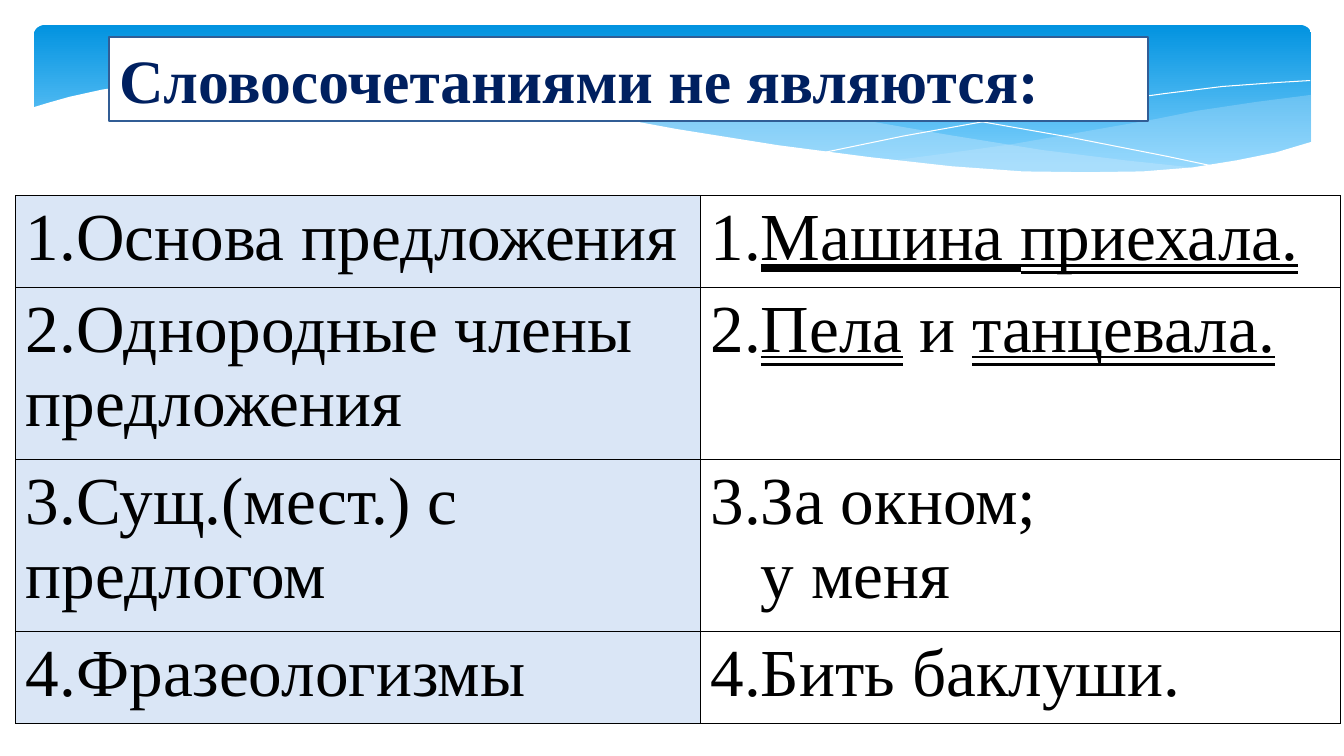
import pptx
import pptx.dml.color
import pptx.enum.shapes
import pptx.enum.text
import pptx.oxml
import pptx.oxml.ns
import pptx.util

Cm = pptx.util.Cm
Pt = pptx.util.Pt
RGBColor = pptx.dml.color.RGBColor
SHAPE = pptx.enum.shapes.MSO_SHAPE
UNDERLINE = pptx.enum.text.MSO_UNDERLINE

WHITE = RGBColor(0xFF, 0xFF, 0xFF)
BLACK = RGBColor(0x00, 0x00, 0x00)
NAVY = RGBColor(0x00, 0x20, 0x60)
FRAME_BLUE = RGBColor(0x31, 0x5D, 0x95)
DEEP_SKY = RGBColor(0x02, 0x93, 0xE0)
LIGHT_SKY = RGBColor(0x83, 0xD3, 0xFE)
WAVE_BLUE = RGBColor(0xC6, 0xE7, 0xFC)
CELL_BLUE = RGBColor(0xDA, 0xE6, 0xF6)

# Outlines of the header waves, in centimetres
RIGHT_WAVE = [
    (33.05, 2.39), (31.65, 2.57), (30.18, 2.79), (29.13, 3), (27.25, 3.33),
    (25.53, 3.63), (23.9, 3.86), (22.4, 4.06), (23.88, 4.19), (25.22, 4.29),
    (26.82, 4.37), (28.27, 4.37), (29.54, 4.29), (30.66, 4.14), (31.67, 3.96),
    (33.05, 3.61)]
WIDE_WAVE = [
    (30.23, 4.24), (28.35, 4.04), (26.26, 3.78), (23.9, 3.4), (21.31, 2.95),
    (19.28, 2.59), (17.42, 2.34), (15.72, 2.18), (13.51, 2.03), (11.66, 2.03),
    (9.7, 2.18), (11.58, 2.39), (13.69, 2.69), (15.21, 2.95), (17.93, 3.43),
    (20.37, 3.81), (22.53, 4.09), (24.46, 4.27), (26.16, 4.37), (27.69, 4.39),
    (29.03, 4.34)]
FALLING_LINE = [
    (10.46, 2.29), (11.63, 2.13), (14.1, 2.06), (16.56, 2.13), (18.85, 2.31),
    (20.6, 2.49), (22.5, 2.74), (24.64, 3.05), (26.92, 3.45), (29.41, 3.94),
    (30.73, 4.22)]
RISING_LINE = [
    (20.78, 3.84), (22.76, 3.43), (25.32, 2.97), (27.31, 2.64), (29.34, 2.36),
    (30.81, 2.18), (32.18, 2.08), (33.02, 2.03)]
WHITE_WAVE = [
    (33.1, 3.56), (32.16, 3.84), (31.17, 4.04), (30.05, 4.22), (28.8, 4.32),
    (27.38, 4.34), (25.78, 4.32), (23.98, 4.19), (21.92, 3.96), (19.61, 3.66),
    (17.04, 3.25), (15.14, 2.9), (13.23, 2.59), (11.51, 2.34), (9.91, 2.16),
    (8.46, 2.06), (6.55, 1.98), (4.93, 2.01), (3.61, 2.11), (2.57, 2.26),
    (1.75, 2.44), (1.22, 2.59), (0.79, 2.72), (0.79, 5.69), (33.1, 5.69)]

# Each cell is a list of paragraphs, each paragraph a list of (text, underline)
THICK, DOUBLE = UNDERLINE.HEAVY_LINE, UNDERLINE.DOUBLE_LINE
ROWS = [
    ([[("1.Основа предложения", None)]],
     [[("1.", None), ("Машина ", THICK), ("приехала.", DOUBLE)]]),
    ([[("2.Однородные члены предложения", None)]],
     [[("2.", None), ("Пела", DOUBLE), (" и ", None), ("танцевала.", DOUBLE)]]),
    ([[("3.Сущ.(мест.) с предлогом", None)]],
     [[("3.За окном;", None)], [("у меня", None)]]),
    ([[("4.Фразеологизмы", None)]],
     [[("4.Бить баклуши.", None)]]),
]


class Page:
    title_format = {"name": "Times New Roman", "size": Pt(44), "bold": True}
    cell_format = {"name": "Times New Roman", "size": Pt(48)}
    second_line_indent = Cm(1.27)

    def __init__(self, slide):
        self.shapes = slide.shapes

    def box(self, preset, left, top, width, height):
        shape = self.shapes.add_shape(
            preset, Cm(left), Cm(top), Cm(width), Cm(height))
        shape.shadow.inherit = False
        return shape

    def banner(self, left, top, width, height):
        banner = self.box(SHAPE.ROUNDED_RECTANGLE, left, top, width, height)
        banner.adjustments[0] = 0.07
        banner.line.fill.background()
        banner.fill.gradient()
        banner.fill.gradient_angle = 270
        stops = banner.fill.gradient_stops
        for stop, position, color in zip(stops, (0, 0.9), (DEEP_SKY, LIGHT_SKY)):
            stop.position = position
            stop.color.rgb = color

    def outline(self, points, closed):
        corners = [(Cm(x), Cm(y)) for x, y in points]
        builder = self.shapes.build_freeform(*corners[0])
        builder.add_line_segments(corners[1:], close=closed)
        shape = builder.convert_to_shape()
        shape.shadow.inherit = False
        return shape

    def wave(self, points, color, opacity=100):
        wave = self.outline(points, True)
        wave.line.fill.background()
        wave.fill.solid()
        wave.fill.fore_color.rgb = color
        if opacity < 100:
            fill_color = pptx.oxml.ns.qn("a:srgbClr")
            tint = next(wave._element.spPr.iter(fill_color))
            tint.append(pptx.oxml.parse_xml(
                f'<a:alpha {pptx.oxml.ns.nsdecls("a")} val="{opacity * 1000}"/>'))

    def hairline(self, points):
        curve = self.outline(points, False)
        curve.fill.background()
        curve.line.color.rgb = WHITE
        curve.line.width = Pt(0)

    def add_span(self, para, text, formats, color, underline=None):
        span = para.add_run()
        span.text = text
        for key, value in formats.items():
            setattr(span.font, key, value)
        span.font.color.rgb = color
        span.font.underline = underline

    def title(self, text, left, top, width, height):
        box = self.box(SHAPE.RECTANGLE, left, top, width, height)
        box.fill.solid()
        box.fill.fore_color.rgb = WHITE
        box.line.color.rgb = FRAME_BLUE
        box.line.width = Pt(1.25)
        frame = box.text_frame
        frame.word_wrap = True
        frame.auto_size = pptx.enum.text.MSO_AUTO_SIZE.SHAPE_TO_FIT_TEXT
        para = frame.paragraphs[0]
        para.alignment = pptx.enum.text.PP_ALIGN.LEFT
        self.add_span(para, text, self.title_format, NAVY)

    def cell(self, cell, paragraphs, color):
        properties = cell._tc.get_or_add_tcPr()
        for side in "LRTB":
            properties.append(pptx.oxml.parse_xml(
                f'<a:ln{side} {pptx.oxml.ns.nsdecls("a")} w="{Pt(1)}"><a:solidFill>'
                f'<a:srgbClr val="{BLACK}"/></a:solidFill></a:ln{side}>'))
        cell.fill.solid()
        cell.fill.fore_color.rgb = color
        frame = cell.text_frame
        for index, spans in enumerate(paragraphs):
            para = frame.add_paragraph() if index else frame.paragraphs[0]
            if index:
                para._p.get_or_add_pPr().set("marL", str(self.second_line_indent))
            for text, underline in spans:
                self.add_span(para, text, self.cell_format, BLACK, underline)

    def table(self, rows, left, top, widths, heights):
        table = self.shapes.add_table(
            len(rows), len(widths), Cm(left), Cm(top),
            Cm(sum(widths)), Cm(sum(heights))).table
        table.first_row = table.horz_banding = False
        for column, width in zip(table.columns, widths):
            column.width = Cm(width)
        for row, height, contents in zip(table.rows, heights, rows):
            row.height = Cm(height)
            for cell, content, color in zip(row.cells, contents, (CELL_BLUE, WHITE)):
                self.cell(cell, content, color)


def main():
    deck = pptx.Presentation()
    deck.slide_width, deck.slide_height = Cm(33.87), Cm(19.05)
    page = Page(deck.slides.add_slide(deck.slide_layouts[6]))
    page.banner(0.85, 0.63, 32.2, 3.96)
    page.wave(RIGHT_WAVE, WAVE_BLUE, 29)
    page.wave(WIDE_WAVE, WAVE_BLUE, 40)
    page.hairline(FALLING_LINE)
    page.hairline(RISING_LINE)
    page.wave(WHITE_WAVE, WHITE)
    page.title("Словосочетаниями не являются:", 2.75, 0.93, 26.18, 2.13)
    page.table(ROWS, 0.4, 4.93, (17.25, 16.13), (2.31, 4.34, 4.34, 2.31))
    deck.save("out.pptx")


if __name__ == "__main__":
    main()
